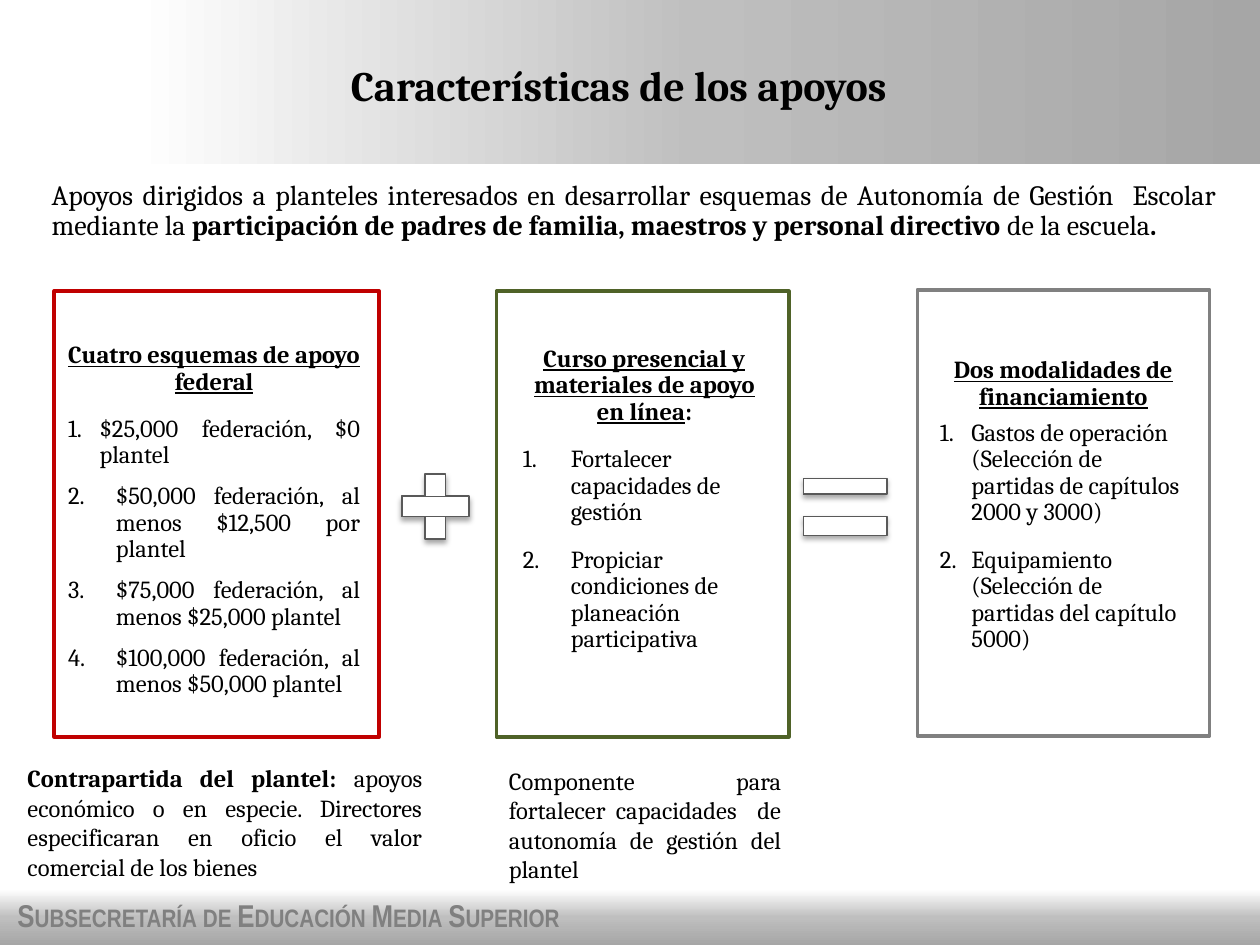
import pptx
import pptx.dml.color
import pptx.enum.shapes
import pptx.enum.text
import pptx.oxml
import pptx.oxml.ns
import pptx.util
from pptx.util import Inches

RGBColor = pptx.dml.color.RGBColor
Shape = pptx.enum.shapes.MSO_SHAPE
Align = pptx.enum.text.PP_ALIGN
Anchor = pptx.enum.text.MSO_ANCHOR

BLACK = RGBColor(0x00, 0x00, 0x00)
WHITE = RGBColor(0xFF, 0xFF, 0xFF)
SILVER = RGBColor(0xBF, 0xBF, 0xBF)
STEEL = RGBColor(0xA6, 0xA6, 0xA6)
GRAY = RGBColor(0x80, 0x80, 0x80)
CHARCOAL = RGBColor(0x59, 0x59, 0x59)
RED = RGBColor(0xC0, 0x00, 0x00)
GREEN = RGBColor(0x4F, 0x62, 0x28)
NAMESPACE = pptx.oxml.ns.nsdecls("a")


class SlideBuilder:
    font_name = "Cambria"
    text_size = 14

    def __init__(self, slide):
        self.slide = slide

    def place(self, shape, box):
        shape.left, shape.top, shape.width, shape.height = map(Inches, box)

    def format_frame(self, shape, anchor=Anchor.TOP, inset=None):
        frame = shape.text_frame
        frame.word_wrap = True
        frame.auto_size = pptx.enum.text.MSO_AUTO_SIZE.NONE
        frame.vertical_anchor = anchor
        if inset is not None:
            frame.margin_left = frame.margin_right = Inches(inset)
            frame.margin_top = frame.margin_bottom = Inches(inset)
        return frame

    def format_paragraph(self, paragraph, align, spacing=1.0, before=0, indent=0, numbered=False):
        paragraph.alignment = align
        paragraph.line_spacing = spacing
        paragraph.space_before = pptx.util.Pt(before)
        paragraph.space_after = pptx.util.Pt(0)
        properties = paragraph._p.get_or_add_pPr()
        properties.set("marL", str(Inches(indent)))
        properties.set("indent", str(-Inches(indent)))
        bullet = 'buAutoNum type="arabicPeriod"' if numbered else "buNone"
        if numbered:
            properties.append(pptx.oxml.parse_xml(f'<a:buFont {NAMESPACE} typeface="+mj-lt"/>'))
        properties.append(pptx.oxml.parse_xml(f"<a:{bullet} {NAMESPACE}/>"))

    def add_run(self, paragraph, text, size=None, bold=False, underline=False,
                color=BLACK, name=None):
        run = paragraph.add_run()
        run.text = text
        run.font.name = name or self.font_name
        run.font.size = pptx.util.Pt(size or self.text_size)
        run.font.bold = bold
        run.font.underline = underline
        run.font.color.rgb = color
        return run

    def add_title(self, box, text):
        title = self.slide.shapes.title
        self.slide.shapes.element.append(title.element)
        self.place(title, box)
        paragraph = self.format_frame(title, Anchor.MIDDLE).paragraphs[0]
        self.format_paragraph(paragraph, Align.CENTER)
        self.add_run(paragraph, text, 24, True)

    def add_text(self, shape, box, runs, size=None, spacing=1.0):
        self.place(shape, box)
        paragraph = self.format_frame(shape).paragraphs[0]
        self.format_paragraph(paragraph, Align.JUSTIFY, spacing)
        for text, bold in runs:
            self.add_run(paragraph, text, size, bold)

    def add_note(self, box, runs):
        self.add_text(self.slide.shapes.add_textbox(0, 0, 0, 0), box, runs)

    def add_list(self, placeholder, box, heading, items, align, anchor):
        self.place(placeholder, box)
        frame = self.format_frame(placeholder, anchor, 0.02)
        paragraph = frame.paragraphs[0]
        self.format_paragraph(paragraph, Align.CENTER, 0.9)
        for text, underline in heading:
            self.add_run(paragraph, text, bold=True, underline=underline)
        for text, indent, before in items:
            paragraph = frame.add_paragraph()
            self.format_paragraph(paragraph, align, 0.9, before, indent, True)
            self.add_run(paragraph, text)

    def add_band(self, box, angle):
        band = self.slide.shapes.add_shape(Shape.RECTANGLE, *map(Inches, box))
        band.shadow.inherit = False
        band.line.fill.background()
        stops = "".join(
            f'<a:gs pos="{position}"><a:srgbClr val="{color}"/></a:gs>'
            for position, color in ((0, WHITE), (50000, SILVER), (100000, STEEL)))
        gradient = pptx.oxml.parse_xml(
            f'<a:gradFill {NAMESPACE} rotWithShape="1"><a:gsLst>{stops}</a:gsLst>'
            f'<a:lin ang="{angle * 60000}" scaled="0"/></a:gradFill>')
        band._element.spPr.find(pptx.oxml.ns.qn("a:prstGeom")).addnext(gradient)

    def add_footer(self, box, text):
        footer = self.slide.shapes.add_textbox(*map(Inches, box))
        paragraph = self.format_frame(footer).paragraphs[0]
        run = self.add_run(paragraph, text, 18, True, color=GRAY, name="Arial Narrow")
        run._r.get_or_add_rPr().set("cap", "small")

    def add_frame(self, box, color):
        frame = self.slide.shapes.add_shape(Shape.RECTANGLE, *map(Inches, box))
        frame.shadow.inherit = False
        frame.fill.background()
        frame.line.color.rgb = color
        frame.line.width = pptx.util.Pt(2)

    def add_symbol(self, kind, symbol_box, bar_box):
        group = self.slide.shapes.add_group_shape()
        for preset, box in ((kind, symbol_box), (Shape.RECTANGLE, bar_box)):
            part = group.shapes.add_shape(preset, *map(Inches, box))
            part.shadow.inherit = False
            part.fill.solid()
            part.fill.fore_color.rgb = WHITE
            part.line.color.rgb = CHARCOAL
            part.line.width = pptx.util.Pt(0.75)
            if preset == kind:
                effects = part._element.spPr.find(pptx.oxml.ns.qn("a:effectLst"))
                effects.append(pptx.oxml.parse_xml(
                    f'<a:outerShdw {NAMESPACE} blurRad="{pptx.util.Pt(3.1)}" '
                    f'dist="{pptx.util.Pt(1.8)}" dir="5400000" rotWithShape="0">'
                    '<a:srgbClr val="000000"><a:alpha val="35000"/></a:srgbClr></a:outerShdw>'))


def main():
    presentation = pptx.Presentation()
    presentation.slide_width = Inches(10)
    presentation.slide_height = Inches(7.5)
    slide = presentation.slides.add_slide(presentation.slide_layouts.get_by_name("Comparison"))
    for placeholder in list(slide.placeholders):
        if placeholder.placeholder_format.idx >= 10:
            placeholder.element.getparent().remove(placeholder.element)
    intro, schemes, course, funding = [slide.placeholders[index] for index in range(1, 5)]
    builder = SlideBuilder(slide)

    builder.add_band((0, 7.06, 10, 0.44), 90)
    builder.add_footer((0.04, 7.06, 6.46, 0.4), "Subsecretaría de Educación Media Superior")
    builder.add_band((1.06, 0, 8.94, 1.3), 0)
    builder.add_title((0.67, 0.05, 8.48, 1.25), "Características de los apoyos")
    builder.add_text(intro, (0.31, 1.39, 9.45, 0.83), [
        ("Apoyos dirigidos a planteles interesados en desarrollar esquemas de "
         "Autonomía de Gestión  Escolar mediante la ", False),
        ("participación de padres de familia, maestros y personal directivo", True),
        (" de la escuela", False),
        (".", True)], 16, 0.9)

    builder.add_list(schemes, (0.52, 2.7, 2.36, 2.85),
                     [("Cuatro esquemas de apoyo federal", True)], [
        ("$25,000 federación, $0 plantel", 0.25, 11.7),
        ("$50,000 federación, al menos $12,500 por plantel", 0.38, 8.3),
        ("$75,000 federación, al menos $25,000 plantel", 0.38, 8.3),
        ("$100,000 federación, al menos $50,000 plantel", 0.38, 8.3)],
        Align.JUSTIFY, Anchor.TOP)
    builder.add_list(course, (4.13, 2.6, 1.97, 2.73),
                     [("Curso presencial y materiales de apoyo en línea", True), (":", False)], [
        ("Fortalecer capacidades de gestión", 0.38, 12),
        ("Propiciar condiciones de planeación participativa", 0.38, 12)],
        Align.LEFT, Anchor.MIDDLE)
    builder.add_list(funding, (7.44, 2.62, 2, 2.78),
                     [("Dos modalidades de financiamiento", True)], [
        ("Gastos de operación (Selección de partidas de capítulos 2000 y 3000)", 0.25, 5.5),
        ("Equipamiento (Selección de partidas del capítulo 5000)", 0.25, 12)],
        Align.LEFT, Anchor.MIDDLE)

    builder.add_symbol(Shape.MATH_PLUS, (3.09, 3.67, 0.73, 0.7), (3.19, 3.94, 0.53, 0.16))
    for top, height in ((3.75, 0.22), (4.05, 0.25)):
        builder.add_symbol(Shape.MATH_EQUAL, (6.26, top, 0.89, height),
                           (6.38, top + 0.05, 0.66, height - 0.1))

    for left, top, width, color in ((0.43, 2.31, 2.58, RED), (3.94, 2.31, 2.32, GREEN),
                                    (7.28, 2.3, 2.32, GRAY)):
        builder.add_frame((left, top, width, 3.54), color)

    builder.add_note((3.94, 6.03, 2.36, 1.04), [
        ("Componente para fortalecer capacidades  de autonomía de gestión del plantel", False)])
    builder.add_note((0.12, 6.01, 3.33, 1.04), [
        ("Contrapartida del plantel: ", True),
        ("apoyos económico o en especie. Directores especificaran en oficio el valor "
         "comercial de los bienes", False)])

    presentation.save("out.pptx")


if __name__ == "__main__":
    main()
